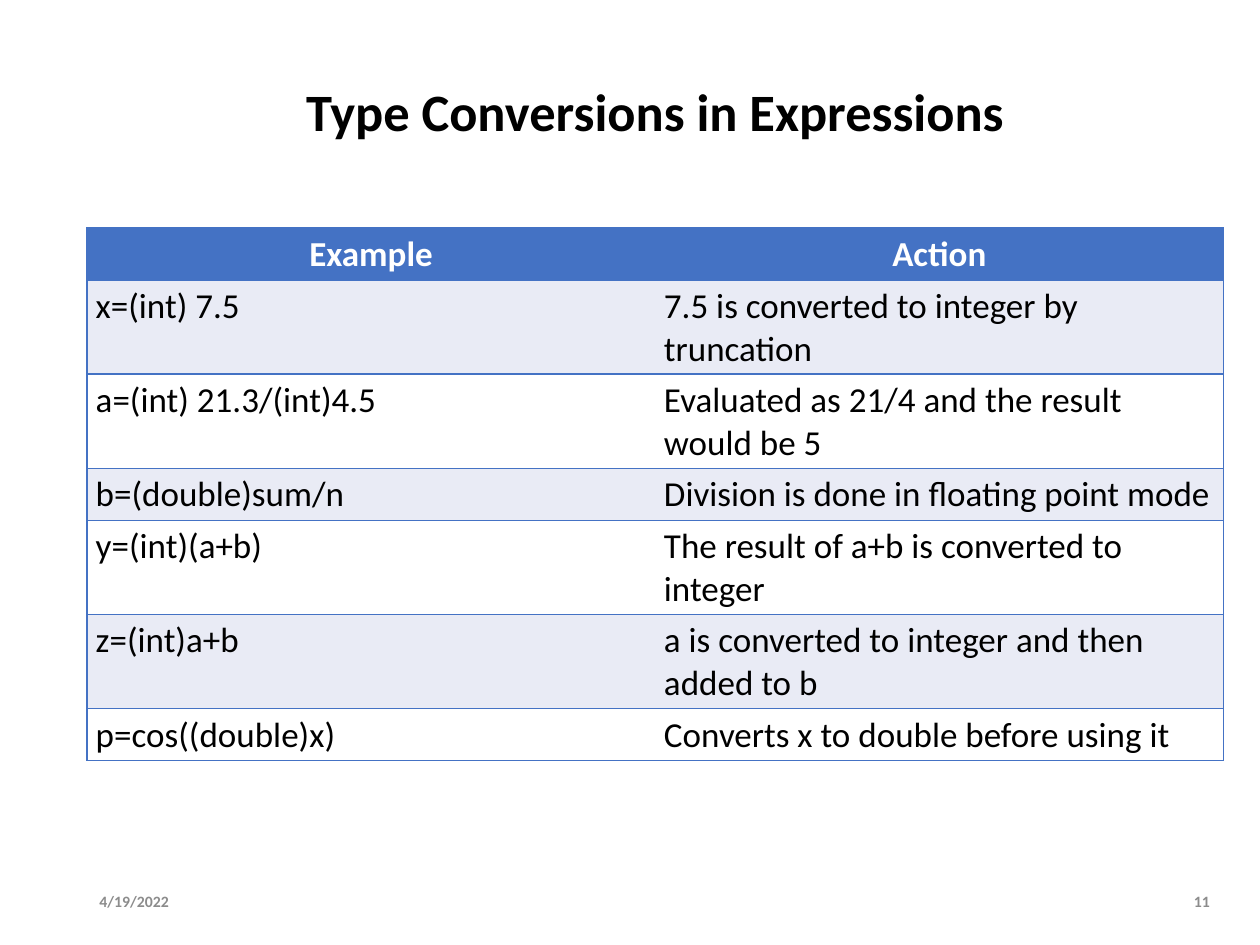
from lxml.etree import SubElement
from pptx import Presentation
from pptx.dml.color import RGBColor
from pptx.enum.text import MSO_ANCHOR, PP_ALIGN
from pptx.oxml.ns import qn
from pptx.util import Inches, Pt

TITLE = "Type Conversions in Expressions"
DATE = "4/19/2022"
PAGE = "11"
HEADER = ("Example", "Action")
CONVERSIONS = [
    ("x=(int) 7.5", "7.5 is converted to integer by truncation"),
    ("a=(int) 21.3/(int)4.5", "Evaluated as 21/4 and the result would be 5"),
    ("b=(double)sum/n", "Division is done in floating point mode"),
    ("y=(int)(a+b)", "The result of a+b is converted to integer"),
    ("z=(int)a+b", "a is converted to integer and then added to b"),
    ("p=cos((double)x)", "Converts x to double before using it"),
]
COLORS = {
    "text": "000000",
    "header": "4472C4",
    "header_text": "FFFFFF",
    "band": "E9EBF5",
    "plain": "FFFFFF",
    "footer": "8C8C8C",
}
FONT = "Calibri"
LEFT, WIDTH = 0.69, 9.02
ROW_HEIGHT = 0.3


def write(frame, text, size, color, bold, align):
    paragraph = frame.paragraphs[0]
    paragraph.alignment = align
    run = paragraph.add_run()
    run.text = text
    run.font.name = FONT
    run.font.size = Pt(size)
    run.font.bold = bold
    run.font.color.rgb = RGBColor.from_string(COLORS[color])
    return paragraph


def add_label(slide, box, text, size, color, align):
    frame = slide.shapes.add_textbox(*map(Inches, box)).text_frame
    frame.word_wrap = True
    frame.vertical_anchor = MSO_ANCHOR.MIDDLE
    return write(frame, text, size, color, True, align)


def set_borders(cell, hidden_side):
    properties = cell._tc.get_or_add_tcPr()
    for side in "LRTB":
        line = SubElement(properties, qn(f"a:ln{side}"), w=str(Pt(1)))
        if side == hidden_side:
            SubElement(line, qn("a:noFill"))
        else:
            fill = SubElement(line, qn("a:solidFill"))
            SubElement(fill, qn("a:srgbClr"), val=COLORS["header"])


def add_conversion_table(slide):
    rows = [HEADER, *CONVERSIONS]
    table = slide.shapes.add_table(
        len(rows), len(HEADER), Inches(LEFT), Inches(1.81),
        Inches(WIDTH), Inches(ROW_HEIGHT * len(rows))).table
    for r, row in enumerate(rows):
        is_header = r == 0
        fill = "header" if is_header else "band" if r % 2 else "plain"
        color = "header_text" if is_header else "text"
        align = PP_ALIGN.CENTER if is_header else PP_ALIGN.LEFT
        for c, text in enumerate(row):
            cell = table.cell(r, c)
            cell.margin_left = cell.margin_right = Inches(0.07)
            cell.margin_top = cell.margin_bottom = Inches(0.04)
            set_borders(cell, "RL"[c])
            cell.fill.solid()
            cell.fill.fore_color.rgb = RGBColor.from_string(COLORS[fill])
            write(cell.text_frame, text, 20, color, is_header, align)


def main():
    deck = Presentation()
    deck.slide_width, deck.slide_height = Inches(10), Inches(7.5)
    slide = deck.slides.add_slide(deck.slide_layouts[6])
    title = add_label(slide, (LEFT, 0.56, WIDTH, 0.69), TITLE, 30, "text",
                      PP_ALIGN.CENTER)
    title.line_spacing = 0.9
    add_conversion_table(slide)
    add_label(slide, (LEFT, 6.95, 0.95, 0.4), DATE, 9, "footer", PP_ALIGN.LEFT)
    add_label(slide, (9.31, 6.95, 0.39, 0.4), PAGE, 9, "footer", PP_ALIGN.RIGHT)
    deck.save("out.pptx")


if __name__ == "__main__":
    main()
